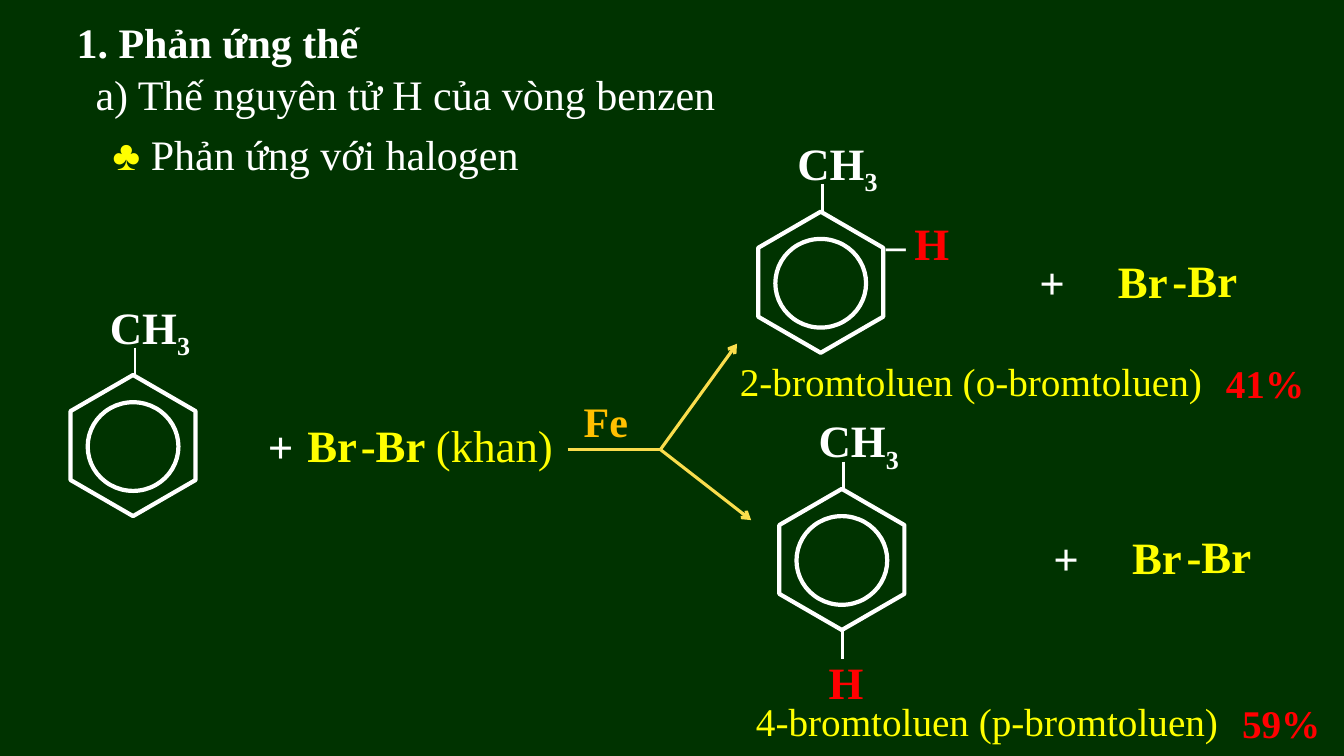
from pptx import Presentation
from pptx.dml.color import RGBColor
from pptx.enum import shapes, text
from pptx.oxml import parse_xml
from pptx.oxml.ns import nsdecls
from pptx.util import Inches, Pt

FONT = "Times New Roman"
COLORS = {"board": "003300", "white": "FFFFFF", "yellow": "FFFF00",
          "red": "FF0000", "gold": "FFC000", "arrow": "FADD4D"}

# Content: a run is (text, color, bold)
TITLE = ("1. Phản ứng thế", "white", True)
METHYL = [("CH", "white", True), ("3", "white", True)]
PLUS = [("+", "white", True)]
BROMINE = [("Br", "yellow", True)]
BONDED_BROMINE = [("-Br", "yellow", True)]
HYDROGEN = [("H", "red", True)]

# Wrapped labels: left, top, width, size, runs
WRAPPED_LABELS = [
    (0.85, 0.63, 9.2, 30, [("a) Thế nguyên tử H của vòng benzen", "white", False)]),
    (1.02, 1.23, 9.2, 30, [("♣ ", "yellow", False),
                           ("Phản ứng với halogen", "white", False)]),
    (2.56, 4.1, 0.66, 32, PLUS),
    (8.69, 2.14, 0.5, 28, [("–", "white", True)]),
    (8.97, 2.09, 0.5, 32, HYDROGEN),
]
# One-line labels: left, top, width, size, runs
LINE_LABELS = [
    (2.95, 4.09, 0.7, 32, BROMINE),
    (3.48, 4.09, 2.13, 32, [("-Br ", "yellow", True), ("(khan)", "yellow", False)]),
    (5.69, 3.87, 0.65, 30, [("Fe", "gold", True)]),
    (8.12, 6.45, 0.55, 32, HYDROGEN),
]
# Left and top of each hexagon before rotation
TOLUENES = [(0.62, 3.8), (7.44, 2.18), (7.65, 4.93)]
# Left and top of the plus sign, left and top of the name, name, yield
PRODUCTS = [
    (10.21, 2.48, 7.24, 3.5, "2-bromtoluen (o-bromtoluen)", "41%"),
    (10.35, 5.22, 7.4, 6.87, "4-bromtoluen (p-bromtoluen)", "59%"),
]
FORK = (6.55, 4.46)
ARROW_TIPS = [(7.31, 3.41), (7.45, 5.16)]


def color(name):
    return RGBColor.from_string(COLORS[name])


def write(shape, size, runs, wrap):
    frame = shape.text_frame
    frame.word_wrap = wrap
    frame.auto_size = text.MSO_AUTO_SIZE.SHAPE_TO_FIT_TEXT
    frame.vertical_anchor = text.MSO_ANCHOR.TOP
    paragraph = frame.paragraphs[0]
    paragraph.alignment = text.PP_ALIGN.LEFT
    for words, color_name, bold in runs:
        run = paragraph.add_run()
        run.text = words
        run.font.name, run.font.size, run.font.bold = FONT, Pt(size), bold
        run.font.color.rgb = color(color_name)
    return paragraph


def add_label(slide, left, top, width, size, runs, wrap=False):
    height = {28: 0.57, 30: 0.61, 32: 0.64}[size]
    box = slide.shapes.add_textbox(Inches(left), Inches(top), Inches(width), Inches(height))
    return write(box, size, runs, wrap)


def add_line(slide, start, end, color_name, weight, arrow=False):
    line = slide.shapes.add_connector(
        shapes.MSO_CONNECTOR.STRAIGHT, *(Inches(value) for value in start + end))
    line.line.color.rgb = color(color_name)
    line.line.width = Pt(weight)
    if arrow:
        line.line._get_or_add_ln().append(
            parse_xml(f'<a:tailEnd {nsdecls("a")} type="arrow"/>'))
    line._element.spPr.append(parse_xml(f'<a:effectLst {nsdecls("a")}/>'))


def add_outline(group, kind, left, top, width, height):
    shape = group.shapes.add_shape(
        kind, Inches(left), Inches(top), Inches(width), Inches(height))
    shape.shadow.inherit = False
    shape.fill.background()
    shape.line.color.rgb = color("white")
    shape.line.width = Pt(3)
    return shape


def add_toluene(slide, left, top):
    ring = slide.shapes.add_group_shape()
    hexagon = add_outline(ring, shapes.MSO_SHAPE.HEXAGON, left, top, 1.4, 1.24)
    hexagon.adjustments[0] = 0.289
    hexagon.adjustments[1] = 1.155
    hexagon.rotation = 270
    add_outline(ring, shapes.MSO_SHAPE.OVAL, left + 0.25, top + 0.19, 0.9, 0.88)
    bond = left + 0.72
    add_line(slide, (bond, top - 0.35), (bond, top - 0.06), "white", 2)
    methyl = add_label(slide, left + 0.37, top - 0.88, 1.02, 32, METHYL)
    methyl.runs[1].font._element.set("baseline", "-25000")


def main():
    presentation = Presentation()
    presentation.slide_width, presentation.slide_height = Inches(13.33), Inches(7.5)
    slide = presentation.slides.add_slide(presentation.slide_layouts[5])
    slide.background.fill.solid()
    slide.background.fill.fore_color.rgb = color("board")

    # Headings and labels
    title = slide.shapes.title
    title.left, title.top = Inches(0.66), Inches(0.11)
    title.width, title.height = Inches(9.2), Inches(0.61)
    write(title, 30, [TITLE], True)
    for label in WRAPPED_LABELS:
        add_label(slide, *label, wrap=True)
    for label in LINE_LABELS:
        add_label(slide, *label)

    # Toluene rings, with the para bond under the last one
    for left, top in TOLUENES:
        add_toluene(slide, left, top)
    add_line(slide, (8.36, 6.25), (8.36, 6.54), "white", 2)

    # Reaction fork
    add_line(slide, (5.63, 4.46), FORK, "arrow", 2.25)
    for tip in ARROW_TIPS:
        add_line(slide, FORK, tip, "arrow", 2.25, arrow=True)

    # Products
    for left, top, name_left, name_top, name, share in PRODUCTS:
        add_label(slide, left, top, 0.66, 32, PLUS, wrap=True)
        add_label(slide, left + 0.78, top - 0.01, 0.7, 32, BROMINE)
        add_label(slide, left + 1.32, top - 0.02, 0.85, 32, BONDED_BROMINE)
        add_label(slide, name_left, name_top, 4.84, 28, [(name, "yellow", False)])
        add_label(slide, name_left + 4.82, name_top + 0.02, 0.99, 28, [(share, "red", True)])

    presentation.save("out.pptx")


if __name__ == "__main__":
    main()
